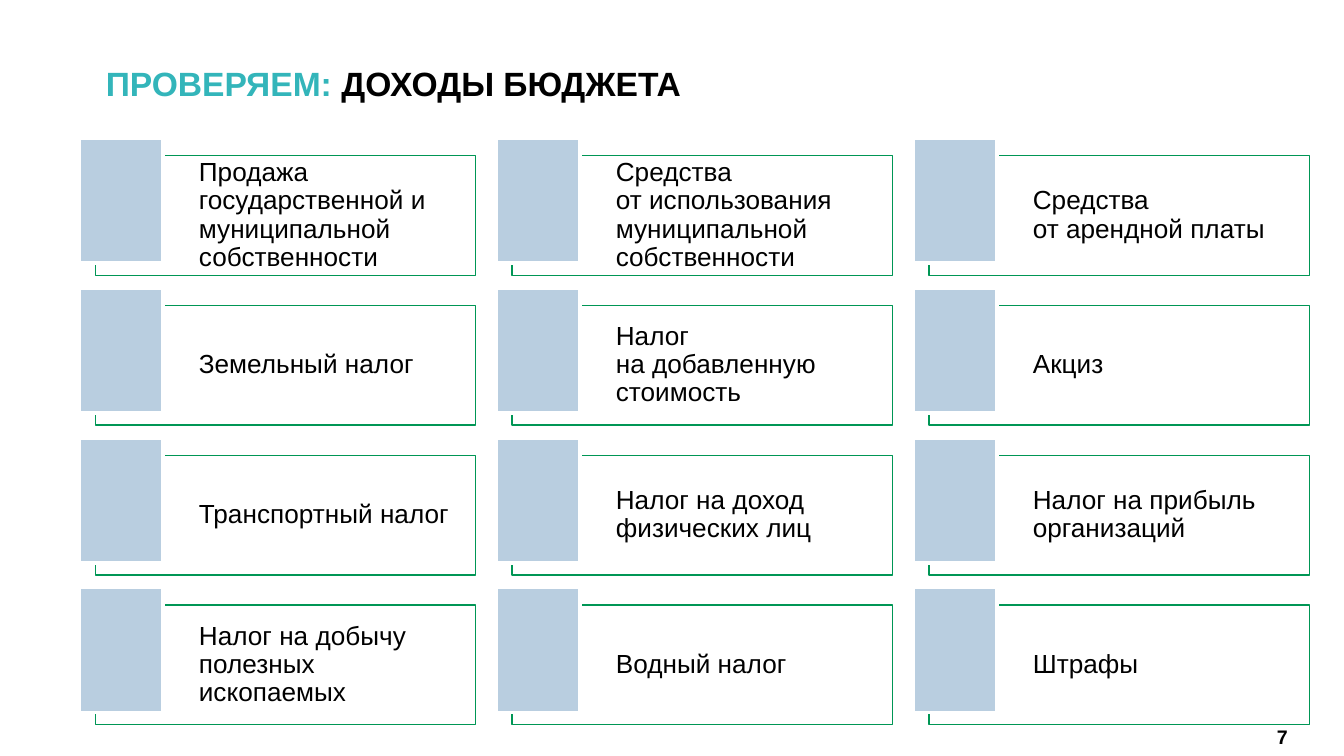
from copy import deepcopy
from dataclasses import dataclass

from lxml.etree import SubElement
from pptx import Presentation
from pptx.dml.color import RGBColor
from pptx.enum.shapes import MSO_SHAPE
from pptx.enum.text import MSO_ANCHOR, MSO_AUTO_SIZE, PP_ALIGN
from pptx.oxml.ns import qn
from pptx.util import Cm, Pt


@dataclass(frozen=True)
class Theme:
    font: str = "Arial"
    white: str = "FFFFFF"
    black: str = "000000"
    teal: str = "33B5BA"
    green: str = "009655"
    blue: str = "B9CEE0"
    title: float = 18
    body: float = 14
    page: float = 10.5


class Deck:
    def __init__(self, theme, slide):
        self.theme = theme
        self.slide = slide

    def style(self, run, size, color, bold=False):
        font = run.font
        font.name = self.theme.font
        font.size = Pt(size)
        font.bold = bold
        font.color.rgb = RGBColor.from_string(color)

    def rect(self, left, top, width, height, fill, line, weight):
        shape = self.slide.shapes.add_shape(
            MSO_SHAPE.RECTANGLE, Cm(left), Cm(top), Cm(width), Cm(height))
        shape.shadow.inherit = False
        shape.fill.solid()
        shape.fill.fore_color.rgb = RGBColor.from_string(fill)
        shape.line.color.rgb = RGBColor.from_string(line)
        shape.line.width = Pt(weight)
        return shape

    def card(self, left, top, text):
        """Add a framed text with a coloured tab over its left edge."""
        theme = self.theme
        box = self.rect(left, top, 7.19, 2.26, theme.white, theme.green, 0.75)
        tint = box.fill._xPr.find(qn("a:solidFill"))[0]
        SubElement(tint, qn("a:alpha"), val="40000")
        frame = box.text_frame
        frame.word_wrap = True
        frame.vertical_anchor = MSO_ANCHOR.MIDDLE
        frame.margin_left = Cm(1.96)
        frame.margin_top = frame.margin_right = frame.margin_bottom = Cm(0.18)
        para = frame.paragraphs[0]
        para.text = text
        para.alignment = PP_ALIGN.LEFT
        para.line_spacing = 0.9
        for run in para.runs:
            self.style(run, theme.body, theme.black)
        # A line break takes the size of the text around it
        for gap in para._p.findall(qn("a:br")):
            gap.insert(0, deepcopy(para.runs[0]._r.rPr))
        self.rect(left - 0.3, top - 0.33, 1.58, 2.36,
                  theme.blue, theme.white, 2)

    def label(self, left, top, width, height, parts, size):
        """Add a bold text box; parts are (text, colour) pairs."""
        box = self.slide.shapes.add_textbox(
            Cm(left), Cm(top), Cm(width), Cm(height))
        frame = box.text_frame
        frame.word_wrap = True
        for text, color in parts:
            run = frame.paragraphs[0].add_run()
            run.text = text
            self.style(run, size, color, True)
        return frame

    def number(self, text):
        theme = self.theme
        frame = self.label(23.22, 13.54, 2.03, 0.76,
                           [(text, theme.black)], theme.page)
        frame.auto_size = MSO_AUTO_SIZE.SHAPE_TO_FIT_TEXT
        frame.vertical_anchor = MSO_ANCHOR.MIDDLE
        frame.margin_left = frame.margin_right = Cm(0.15)
        frame.margin_top = frame.margin_bottom = Cm(0.15)
        frame.paragraphs[0].alignment = PP_ALIGN.CENTER


INCOME = [
    ["Продажа государственной и муниципальной собственности",
     "Средства\nот использования муниципальной собственности",
     "Средства\nот арендной платы"],
    ["Земельный налог", "Налог\nна добавленную стоимость", "Акциз"],
    ["Транспортный налог", "Налог на доход физических лиц",
     "Налог на прибыль организаций"],
    ["Налог на добычу полезных ископаемых", "Водный налог", "Штрафы"],
]


def main():
    show = Presentation()
    show.slide_width, show.slide_height = Cm(25.4), Cm(14.28)
    theme = Theme()
    deck = Deck(theme, show.slides.add_slide(show.slide_layouts[6]))

    for row, names in enumerate(INCOME):
        for col, name in enumerate(names):
            deck.card(1.8 + col * 7.88, 2.94 + row * 2.83, name)

    deck.label(1.75, 1.07, 19.13, 1.9,
               [("ПРОВЕРЯЕМ:", theme.teal),
                (" ДОХОДЫ БЮДЖЕТА", theme.black)], theme.title)
    deck.number("7")
    show.save("out.pptx")


if __name__ == "__main__":
    main()
